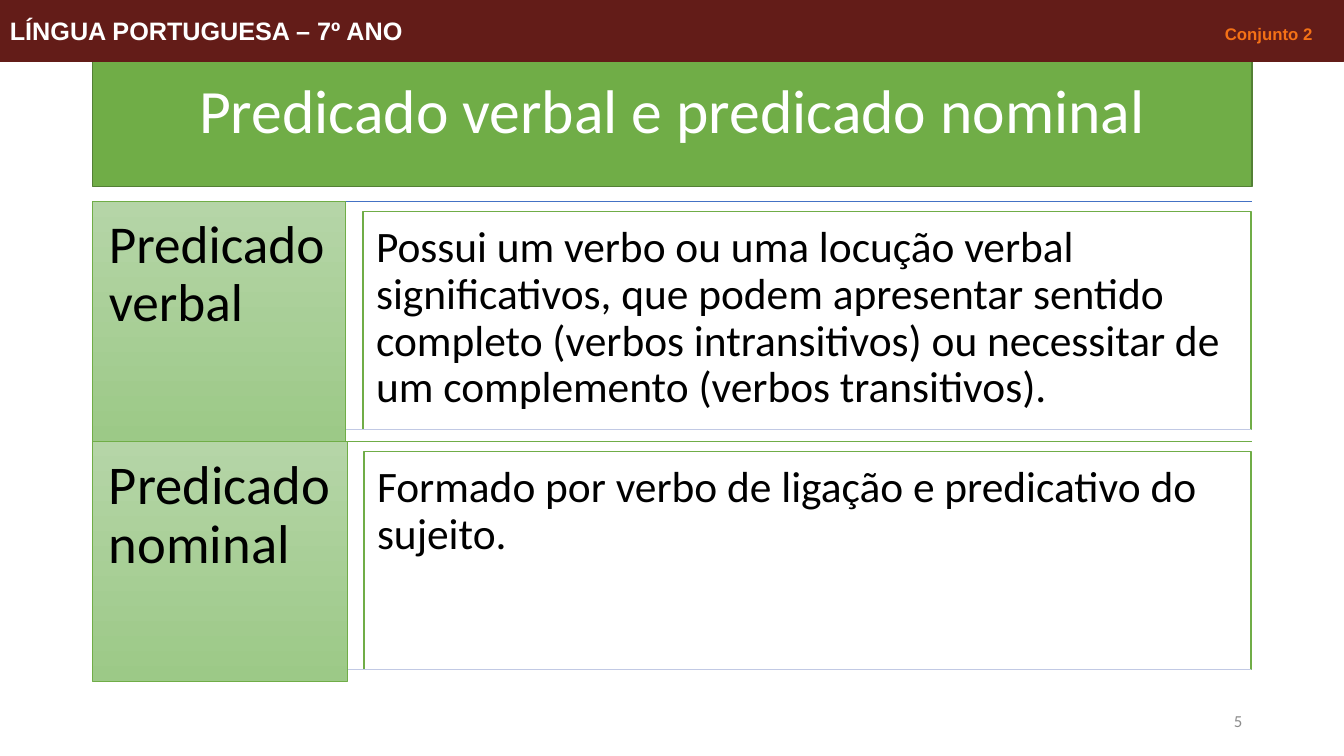
"""Build the slide on verbal and nominal predicates."""
from dataclasses import dataclass
from typing import Any

import lxml.etree
import pptx
import pptx.dml.color
import pptx.enum.shapes
import pptx.enum.text
import pptx.oxml.ns
import pptx.util

PX = 9144
ALIGN = pptx.enum.text.PP_ALIGN
ANCHOR = pptx.enum.text.MSO_ANCHOR
GREEN, WHITE, BLACK, MAROON = "70AD47", "FFFFFF", "000000", "631C18"
ROW_TOP, ROW_HEIGHT = 200, 238
LEFT, RIGHT = 92, 1242


@dataclass(frozen=True)
class Box:
    left: int
    top: int
    width: int
    height: int
    fill: tuple[str, ...] = ()
    line: str = GREEN
    weight: float = 1


@dataclass(frozen=True)
class Text:
    content: str
    size: int
    color: str = BLACK
    align: Any = ALIGN.LEFT
    anchor: Any = ANCHOR.TOP
    inset: int = 10
    spacing: float = 0.9


@dataclass(frozen=True)
class Row:
    label: str
    label_size: int
    label_width: int
    body: str
    body_left: int
    rule: str


ROWS = [
    Row("Predicado verbal", 38, 251,
        "Possui um verbo ou uma locução verbal significativos, que podem apresentar "
        "sentido completo (verbos intransitivos) ou necessitar de um complemento "
        "(verbos transitivos).", 360, "4472C4"),
    Row("Predicado nominal", 39, 253,
        "Formado por verbo de ligação e predicativo do sujeito.", 361, GREEN),
]


def rgb(color: str) -> pptx.dml.color.RGBColor:
    return pptx.dml.color.RGBColor.from_string(color)


def add_box(page: Any, box: Box) -> Any:
    frame = [value * PX for value in (box.left, box.top, box.width, box.height)]
    if not box.fill:
        return page.shapes.add_textbox(*frame)
    shape = page.shapes.add_shape(pptx.enum.shapes.MSO_SHAPE.RECTANGLE, *frame)
    shape.shadow.inherit = False
    if len(box.fill) == 1:
        shape.fill.solid()
        shape.fill.fore_color.rgb = rgb(box.fill[0])
    else:
        shape.fill.gradient()
        shape.fill.gradient_angle = 270
        for stop, color in zip(shape.fill.gradient_stops, box.fill):
            stop.color.rgb = rgb(color)
    shape.line.color.rgb = rgb(box.line)
    shape.line.width = pptx.util.Pt(box.weight)
    return shape


def write(shape: Any, text: Text) -> None:
    frame = shape.text_frame
    frame.word_wrap = True
    frame.vertical_anchor = text.anchor
    frame.margin_left = frame.margin_right = text.inset * PX
    frame.margin_top = frame.margin_bottom = min(text.inset, 5) * PX if text.inset == 10 else text.inset * PX
    para = frame.paragraphs[0]
    para.text = text.content
    para.alignment = text.align
    para.line_spacing = text.spacing
    para.font.name = "Calibri"
    para.font.size = pptx.util.Pt(text.size)
    para.font.color.rgb = rgb(text.color)


def add_rule(page: Any, left: int, right: int, top: int, color: str) -> None:
    rule = page.shapes.add_connector(
        pptx.enum.shapes.MSO_CONNECTOR.STRAIGHT, left * PX, top * PX, right * PX, top * PX)
    rule.line.color.rgb = rgb(color)
    rule.line.width = pptx.util.Pt(1)
    lxml.etree.SubElement(rule._element.spPr, pptx.oxml.ns.qn("a:effectLst"))


def add_row(page: Any, row: Row, top: int) -> None:
    add_rule(page, LEFT, RIGHT, top, row.rule)
    label = Box(LEFT, top, row.label_width, ROW_HEIGHT, ("B5D5A7", "9CC987"), weight=0.5)
    write(add_box(page, label), Text(row.label, row.label_size, inset=16))
    body = Box(row.body_left, top + 10, RIGHT - 1 - row.body_left, 216, (WHITE,))
    write(add_box(page, body), Text(row.body, 31, inset=13))
    add_rule(page, LEFT + row.label_width, RIGHT - 1, top + 226, "C1C9E4")


def add_header(page: Any) -> None:
    band = add_box(page, Box(0, 0, 1333, 61, (MAROON,), MAROON, 0.75))
    frame = band.text_frame
    frame.vertical_anchor = ANCHOR.MIDDLE
    para = frame.paragraphs[0]
    para.alignment = ALIGN.LEFT
    para.font.name = "Arial"
    para.font.bold = True
    for content, size, color in [("LÍNGUA PORTUGUESA – 7º ANO\t", 18, WHITE),
                                 ("Conjunto 2", 12, "F47116")]:
        span = para.add_run()
        span.text = content
        span.font.size = pptx.util.Pt(size)
        span.font.color.rgb = rgb(color)
    qn = pptx.oxml.ns.qn
    stops = lxml.etree.Element(qn("a:tabLst"))
    lxml.etree.SubElement(stops, qn("a:tab"), pos=str(1292 * PX), algn="r")
    para._p.get_or_add_pPr().insert(0, stops)


def main() -> None:
    deck = pptx.Presentation()
    deck.slide_width, deck.slide_height = 1333 * PX, 750 * PX
    page = deck.slides.add_slide(deck.slide_layouts[6])
    for index, row in enumerate(ROWS):
        add_row(page, row, ROW_TOP + index * ROW_HEIGHT)
    title = add_box(page, Box(LEFT, 40, RIGHT - LEFT, 145, (GREEN,), "538035"))
    write(title, Text("Predicado verbal e predicado nominal", 44, WHITE,
                      ALIGN.CENTER, ANCHOR.MIDDLE))
    number = add_box(page, Box(942, 695, 300, 40))
    write(number, Text("5", 12, "8C8C8C", ALIGN.RIGHT, ANCHOR.MIDDLE, spacing=1.0))
    add_header(page)
    deck.save("out.pptx")


if __name__ == "__main__":
    main()
